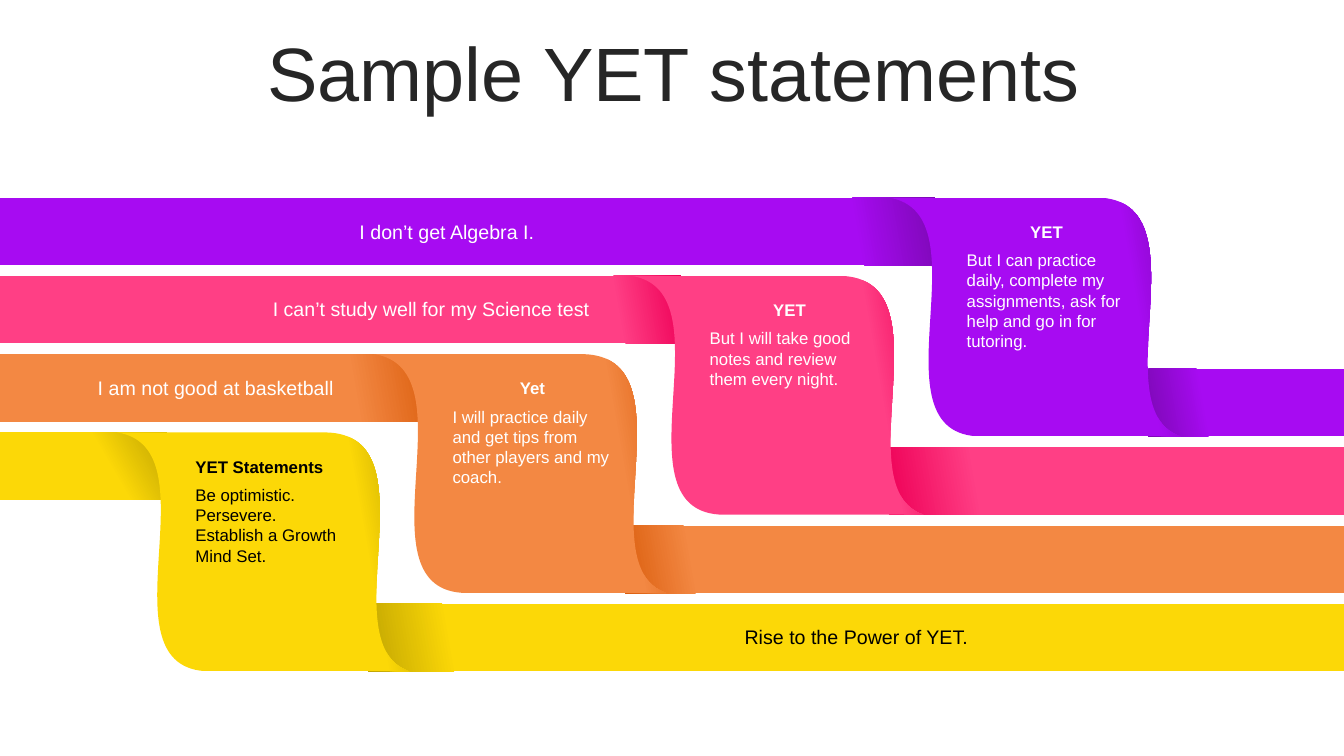
from dataclasses import dataclass

from lxml.etree import SubElement
from pptx import Presentation
from pptx.dml.color import RGBColor
from pptx.enum.shapes import MSO_SHAPE as Shape
from pptx.enum.text import MSO_ANCHOR as Anchor, MSO_AUTO_SIZE as AutoSize, PP_ALIGN as Align
from pptx.oxml.ns import qn
from pptx.util import Inches, Pt

WIDTH, HEIGHT = 13.33, 7.5
COLUMN, ROW = 2.55, 2.33 / 3
FIRST_LEFT, FIRST_TOP = 1.16, 1.96
BAR_HEIGHT, FOLD_HEIGHT = 0.67, 2.37
WHITE, BLACK = "FFFFFF", "000000"


@dataclass
class Ribbon:
    color: str
    shade: str
    upper_end: float
    upper_stop: float
    lower_start: float
    lower_stop: float
    heading: str
    lines: tuple
    body_height: float
    ink: str = WHITE
    heading_align: Align = Align.CENTER
    upper_angle: int = 10


RIBBONS = (
    Ribbon("A70BF2", "7D08B5", 9.27, 0.91, 11.39, 0.7, "YET",
           ("But I can practice daily, complete my assignments, "
            "ask for help and go in for tutoring.",), 1.11),
    Ribbon("FF3F85", "EE0057", 6.75, 0.9, 8.82, 0.8, "YET",
           ("But I will take good notes and review them every night.",), 0.71),
    Ribbon("F38843", "DB5E0E", 4.28, 0.81, 6.2, 0.9, "Yet",
           ("I will practice daily and get tips from other players and my coach.",), 0.91),
    Ribbon("FCD807", "C0A402", 1.65, 0.63, 3.65, 0.91, "YET Statements",
           ("Be optimistic.", "Persevere.", "Establish a Growth Mind Set."),
           0.91, BLACK, Align.LEFT, 30),
)


def rgb(value):
    return RGBColor.from_string(value)


def column_left(index):
    return FIRST_LEFT + COLUMN * (len(RIBBONS) - 1 - index)


def row_top(index):
    return FIRST_TOP + ROW * index


def shade_shape(shape, ribbon, start, angle=10):
    shape.shadow.inherit = False
    shape.line.fill.background()
    shape.fill.gradient()
    shape.fill.gradient_angle = angle
    stops = zip(shape.fill.gradient_stops, (start, 1), (ribbon.color, ribbon.shade))
    for stop, position, color in stops:
        stop.position = position
        stop.color.rgb = rgb(color)


def write(frame, lines, size, color, align=Align.LEFT, bold=False):
    frame.word_wrap = True
    for index, line in enumerate(lines):
        para = frame.add_paragraph() if index else frame.paragraphs[0]
        para.alignment = align
        run = para.add_run()
        run.text = line
        font = run.font
        font.name, font.size, font.bold = "Arial", Pt(size), bold
        font.color.rgb = rgb(color)


def add_text(group, left, top, width, height, lines, color, align=Align.LEFT, bold=False):
    box = group.shapes.add_textbox(*map(Inches, (left, top, width, height)))
    write(box.text_frame, lines, 12, color, align, bold)
    box.text_frame.auto_size = AutoSize.SHAPE_TO_FIT_TEXT


def add_label(page, left, top, text, color, align, right_margin):
    label = page.shapes.add_shape(
        Shape.ROUND_2_SAME_RECTANGLE, *map(Inches, (left, top, 4.11, 0.35)))
    label.shadow.inherit = False
    label.fill.background()
    label.line.fill.background()
    frame = label.text_frame
    write(frame, [text], 14, color, align)
    frame.vertical_anchor = Anchor.TOP
    frame.margin_right = Inches(right_margin)
    frame.auto_size = AutoSize.SHAPE_TO_FIT_TEXT


def add_bar(page, ribbon, left, top, width, start, angle=10, rotation=0):
    bar = page.shapes.add_shape(
        Shape.RECTANGLE, *map(Inches, (left, top, width, BAR_HEIGHT)))
    bar.rotation = rotation
    shade_shape(bar, ribbon, start, angle)
    return bar


def bend(segment, *controls):
    segment.tag = qn("a:cubicBezTo")
    for position, (x, y) in enumerate(controls):
        point = SubElement(segment, qn("a:pt"), x=str(Inches(x)), y=str(Inches(y)))
        segment.insert(position, point)


def add_fold(page, ribbon, left, top):
    corners = ((2.07, 0), (2.9, FOLD_HEIGHT), (0.92, FOLD_HEIGHT), (0, 0))
    builder = page.shapes.build_freeform(Inches(left), Inches(top))
    builder.add_line_segments(
        [(Inches(left) + Inches(x), Inches(top) + Inches(y)) for x, y in corners], close=True)
    fold = builder.convert_to_shape()
    segments = list(fold.element.iter(qn("a:lnTo")))
    bend(segments[1], (3.17, 0.02), (2.1, 2.1))
    bend(segments[3], (-0.2, 2.36), (1, 0.15))
    shade_shape(fold, ribbon, 0.81)


def add_ribbon(page, index, ribbon):
    left, top = column_left(index), row_top(index)
    upper = add_bar(page, ribbon, 0, top, ribbon.upper_end,
                    ribbon.upper_stop, ribbon.upper_angle)
    add_bar(page, ribbon, ribbon.lower_start, top + FOLD_HEIGHT - BAR_HEIGHT,
            WIDTH - ribbon.lower_start, ribbon.lower_stop, rotation=180)
    add_fold(page, ribbon, left, top)
    return upper


def add_statement(page, index, ribbon):
    left, top = column_left(index) + 0.68, row_top(index)
    group = page.shapes.add_group_shape()
    add_text(group, left, top + 0.47, 1.76, ribbon.body_height, ribbon.lines, ribbon.ink)
    add_text(group, left, top + 0.19, 1.78, 0.3, [ribbon.heading],
             ribbon.ink, ribbon.heading_align, True)


def add_title(page, text):
    title = page.shapes.title
    title.left, title.top, title.width, title.height = map(Inches, (0.35, 0.37, 12.66, 0.79))
    frame = title.text_frame
    frame.auto_size = AutoSize.NONE
    frame.vertical_anchor = Anchor.MIDDLE
    write(frame, [text], 54, "262626", Align.CENTER)
    frame.paragraphs[0].line_spacing = 0.9


def main():
    deck = Presentation()
    deck.slide_width, deck.slide_height = Inches(WIDTH), Inches(HEIGHT)
    page = deck.slides.add_slide(deck.slide_layouts[5])
    add_title(page, "Sample YET statements")
    bars = [add_ribbon(page, index, ribbon) for index, ribbon in enumerate(RIBBONS)]
    basketball = bars[2].text_frame
    basketball.vertical_anchor = Anchor.MIDDLE
    write(basketball, ["I am not good at basketball"], 14, WHITE, Align.CENTER)
    for index, ribbon in enumerate(RIBBONS):
        add_statement(page, index, ribbon)
    for label in (
        (3.45, 2.12, "I don’t get Algebra I.", WHITE, Align.LEFT, 0.1),
        (2.59, 2.88, "I can’t study well for my Science test", WHITE, Align.LEFT, 0.1),
        (5.72, 6.13, "Rise to the Power of YET.", BLACK, Align.RIGHT, 0.21),
    ):
        add_label(page, *label)
    deck.save("out.pptx")


if __name__ == "__main__":
    main()
